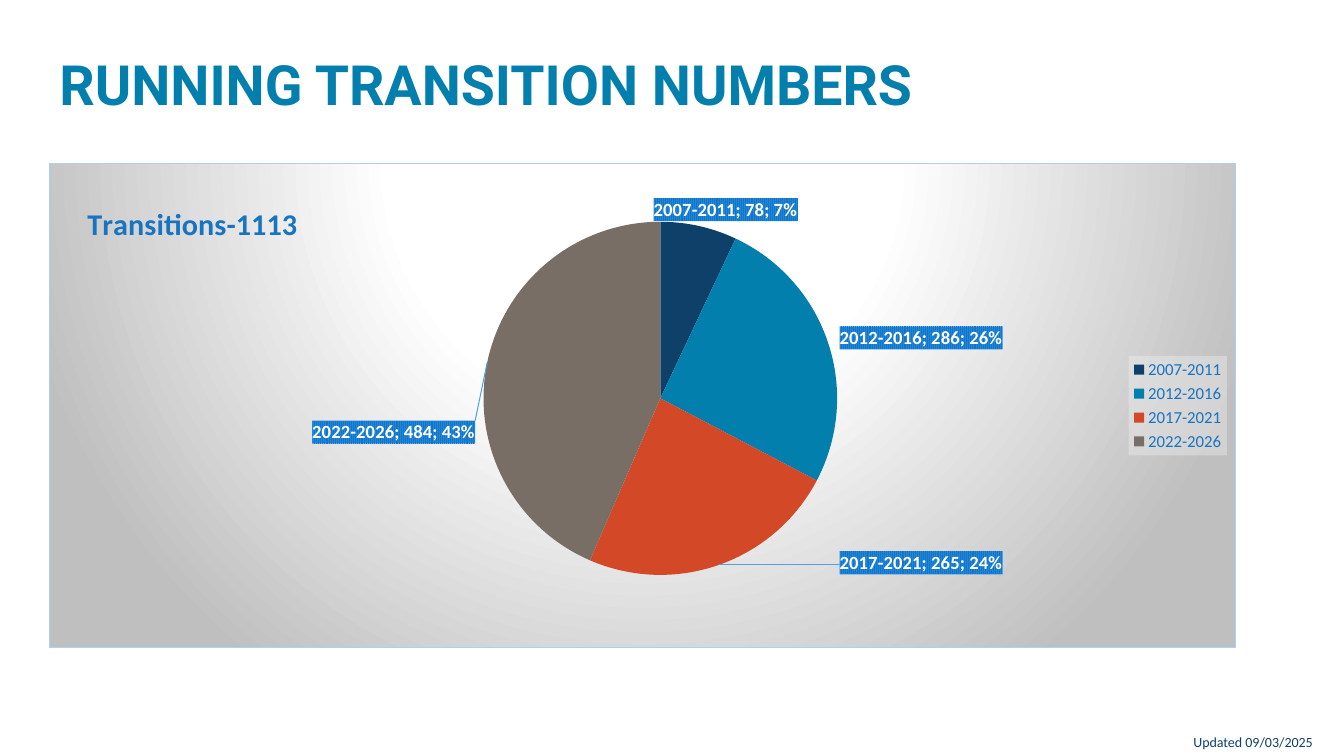
from math import cos, pi, sin

from pptx import Presentation
from pptx.chart.data import CategoryChartData
from pptx.dml.color import RGBColor
from pptx.enum.chart import XL_CHART_TYPE, XL_LEGEND_POSITION
from pptx.enum.text import MSO_ANCHOR, MSO_AUTO_SIZE, PP_ALIGN
from pptx.oxml import parse_xml
from pptx.oxml.ns import nsdecls, qn
from pptx.util import Pt

PIE = XL_CHART_TYPE.PIE
RIGHT = XL_LEGEND_POSITION.RIGHT
MIDDLE = MSO_ANCHOR.MIDDLE
LEFT = PP_ALIGN.LEFT
FIXED = MSO_AUTO_SIZE.NONE

TITLE = "RUNNING TRANSITION NUMBERS"
HEAD = "Transitions-1113"
UPDATED = "Updated 09/03/2025"
SLICES = [
    ("2007-2011", 78, "0E406A", (0.57, 0.095)),
    ("2012-2016", 286, "037FAE", (0.735, 0.36)),
    ("2017-2021", 265, "D34927", (0.735, 0.825)),
    ("2022-2026", 484, "796E66", (0.29, 0.555)),
]
THEME = {
    "head": "Roboto", "body": "Calibri",
    "title": "037FAE", "navy": "0E406A", "blue": "1974C0",
    "stripe": "1A88E3", "lead": "4FA3E3", "edge": "A9D1F4",
    "white": "FFFFFF", "gray": "BFBFBF", "pale": "F2F2F2",
    "title_size": 39.6, "head_size": 21.6, "label_size": 13.3,
    "key_size": 12, "note_size": 10,
}
CHART = (35.3, 116.6, 847.4, 346.3)
PLOT = (0.28, 0.12, 0.47, 0.73)


def style(font, face, size, color, bold=False):
    font.name = face
    font.size = Pt(size)
    font.bold = bold
    font.color.rgb = RGBColor.from_string(color)


def write(frame, text, face, size, color, bold=False):
    run = frame.paragraphs[0].add_run()
    run.text = text
    style(run.font, face, size, color, bold)


def tint(color, extra=""):
    return f'<a:solidFill><a:srgbClr val="{color}">{extra}</a:srgbClr></a:solidFill>'


def layout(x, y, w=None, h=None, edge=True):
    mode = '<c:xMode val="edge"/><c:yMode val="edge"/>' if edge else ""
    inner = '<c:layoutTarget val="inner"/>' if w else ""
    size = f'<c:w val="{w}"/><c:h val="{h}"/>' if w else ""
    return (f'<c:layout {nsdecls("c")}><c:manualLayout>{inner}{mode}'
            f'<c:x val="{x:.4f}"/><c:y val="{y:.4f}"/>{size}</c:manualLayout></c:layout>')


def place(part, index, *box):
    for old in part.findall(qn("c:layout")):
        part.remove(old)
    part.insert(index, parse_xml(layout(*box)))


def labels():
    t = THEME
    look = (f'<c:spPr><a:pattFill prst="narVert"><a:fgClr><a:srgbClr val="{t["blue"]}"/></a:fgClr>'
            f'<a:bgClr><a:srgbClr val="{t["stripe"]}"/></a:bgClr></a:pattFill>'
            '<a:ln><a:noFill/></a:ln></c:spPr><c:txPr><a:bodyPr wrap="none"/><a:p><a:pPr>'
            f'<a:defRPr sz="{t["label_size"] * 100:.0f}" b="1">{tint(t["white"])}'
            f'<a:latin typeface="{t["body"]}"/></a:defRPr></a:pPr>'
            '<a:endParaRPr lang="en-US"/></a:p></c:txPr><c:dLblPos val="ctr"/>')
    flags = {"LegendKey": 0, "Val": 1, "CatName": 1, "SerName": 0, "Percent": 1, "BubbleSize": 0}
    shows = "".join(f'<c:show{name} val="{on}"/>' for name, on in flags.items())
    shows += "<c:separator>; </c:separator>"
    x, y, w, h = PLOT
    ratio = CHART[3] / CHART[2]
    total = sum(row[1] for row in SLICES)
    done, parts = 0, ""
    for i, (name, value, color, (goal_x, goal_y)) in enumerate(SLICES):
        angle = 2 * pi * (done + value / 2) / total
        done += value
        mid_x = x + w / 2 + h / 4 * ratio * sin(angle)
        mid_y = y + h / 2 - h / 4 * cos(angle)
        shift = layout(goal_x - mid_x, goal_y - mid_y, edge=False)
        parts += f'<c:dLbl><c:idx val="{i}"/>{shift}{look}{shows}</c:dLbl>'
    return parse_xml(f'<c:dLbls {nsdecls("c", "a")}>{parts}{look}{shows}'
                     '<c:showLeaderLines val="1"/><c:leaderLines><c:spPr>'
                     f'<a:ln w="9525">{tint(t["lead"])}</a:ln>'
                     '</c:spPr></c:leaderLines></c:dLbls>')


def backdrop():
    t = THEME
    stops = "".join(f'<a:gs pos="{pos}"><a:srgbClr val="{t[key]}"/></a:gs>'
                    for pos, key in ((0, "white"), (39000, "white"), (100000, "gray")))
    return parse_xml(f'<c:spPr {nsdecls("c", "a")}><a:gradFill><a:gsLst>{stops}</a:gsLst>'
                     '<a:path path="circle"><a:fillToRect l="50000" t="-80000" r="50000" b="180000"/>'
                     f'</a:path></a:gradFill><a:ln w="9525">{tint(t["edge"])}</a:ln></c:spPr>')


def add_pie(slide):
    t = THEME
    data = CategoryChartData()
    data.categories = [row[0] for row in SLICES]
    data.add_series("Series 1", [row[1] for row in SLICES])
    chart = slide.shapes.add_chart(PIE, *map(Pt, CHART), data).chart
    style(chart.font, t["body"], t["note_size"], t["navy"])
    chart.has_title = True
    write(chart.chart_title.text_frame, HEAD, t["body"], t["head_size"], t["blue"], True)
    space = chart._chartSpace
    place(space.chart.find(qn("c:title")), 1, 0.027, 0.068)
    place(space.chart.plotArea, 0, *PLOT)
    space.chart.addnext(backdrop())

    chart.has_legend = True
    key = chart.legend
    key.position = RIGHT
    key.include_in_layout = False
    style(key.font, t["body"], t["key_size"], t["blue"])
    fill = tint(t["pale"], '<a:alpha val="39000"/>')
    key._element.find(qn("c:txPr")).addprevious(
        parse_xml(f'<c:spPr {nsdecls("c", "a")}>{fill}</c:spPr>'))

    plot = chart.plots[0]
    plot.vary_by_categories = True
    series = plot.series[0]
    for i, row in enumerate(SLICES):
        paint = series.points[i].format.fill
        paint.solid()
        paint.fore_color.rgb = RGBColor.from_string(row[2])
    series._element.find(qn("c:cat")).addprevious(labels())


def main():
    t = THEME
    deck = Presentation()
    deck.slide_width, deck.slide_height = Pt(960), Pt(540)
    slide = deck.slides.add_slide(deck.slide_layouts[5])
    title = slide.shapes.title
    title.left, title.top, title.width, title.height = map(Pt, (35.3, 41, 925, 43.2))
    frame = title.text_frame
    frame.auto_size = FIXED
    frame.vertical_anchor = MIDDLE
    frame.paragraphs[0].alignment = LEFT
    frame.paragraphs[0].line_spacing = 0.9
    write(frame, TITLE, t["head"], t["title_size"], t["title"], True)
    add_pie(slide)
    note = slide.shapes.add_textbox(*map(Pt, (845.3, 520.5, 101.5, 19.4))).text_frame
    note.word_wrap = False
    write(note, UPDATED, t["body"], t["note_size"], t["navy"])
    deck.save("out.pptx")


if __name__ == "__main__":
    main()
